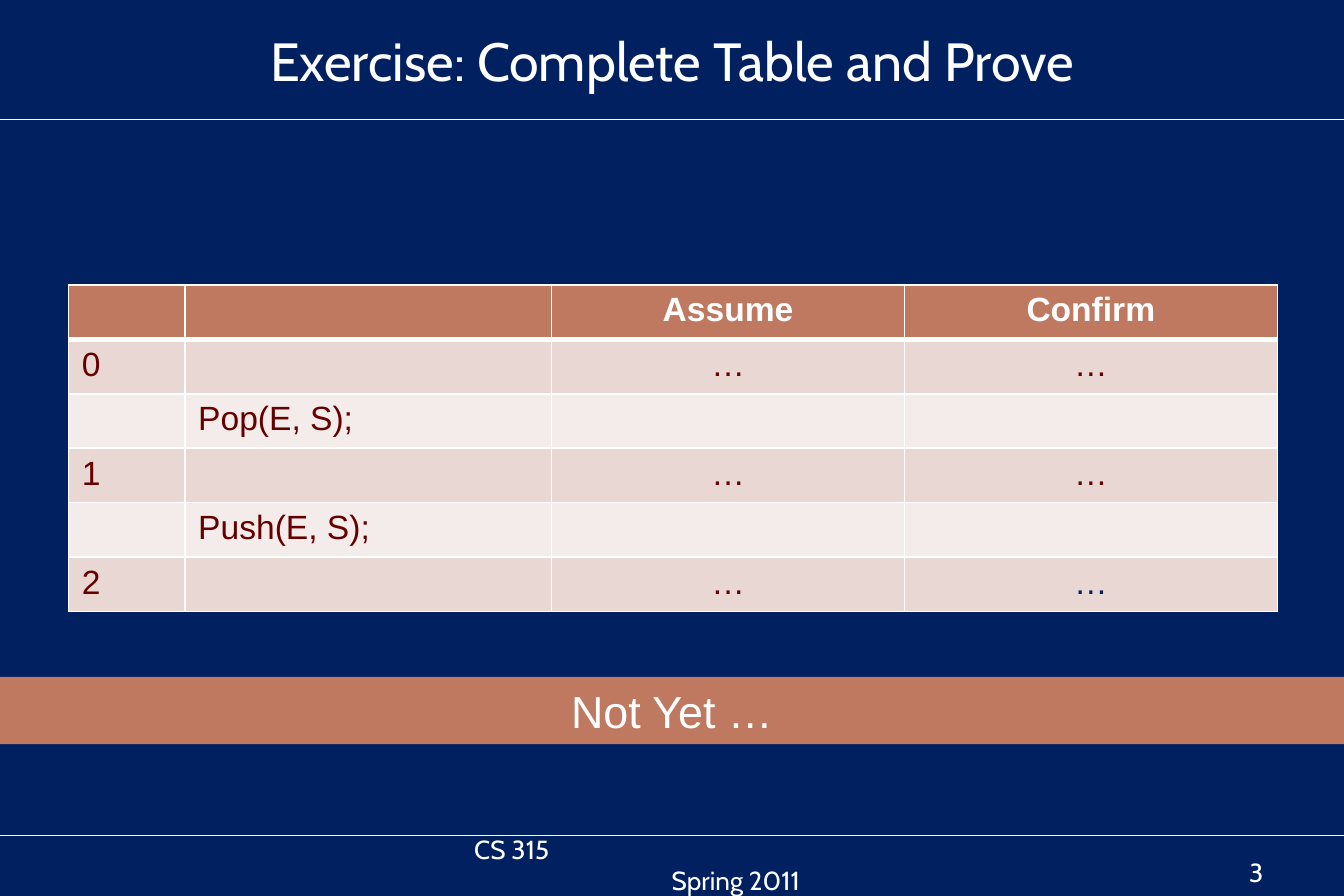
from dataclasses import dataclass
from typing import Any, NamedTuple

from lxml.etree import SubElement
from pptx import Presentation
from pptx.dml.color import RGBColor
from pptx.enum.shapes import MSO_CONNECTOR, MSO_SHAPE
from pptx.enum.text import MSO_ANCHOR, PP_ALIGN
from pptx.oxml.ns import qn
from pptx.util import Emu, Pt

SCALE = 4572  # EMU per px, 200 px to the inch


@dataclass(frozen=True)
class Theme:
    navy: str = "002060"
    clay: str = "BE7960"
    blush: str = "E8D7D2"
    pale: str = "F4ECEA"
    wine: str = "660000"
    white: str = "FFFFFF"
    head: str = "Cabin"
    body: str = "Arial"
    title: float = 28.8
    banner: float = 24
    cell: float = 18
    foot: float = 14
    rule: float = 0.75
    grid: float = 1
    thick: float = 3


class Box(NamedTuple):
    left: int
    top: int
    width: int
    height: int


class Look(NamedTuple):
    name: str
    size: float
    color: str
    bold: bool = False


class Line(NamedTuple):
    text: str
    indent: int = 0


THEME = Theme()
WIDTH, HEIGHT = 2000, 1334
RULES = (178, 1244)
COLS = (173, 546, 525, 555)
ROW = 81
GRID = Box(102, 424, sum(COLS), ROW * 6)
ROWS = (
    ("", "", "Assume", "Confirm"),
    ("0", "", "…", "…"),
    ("", "Pop(E, S);", "", ""),
    ("1", "", "…", "…"),
    ("", "Push(E, S);", "", ""),
    ("2", "", "…", "…"),
)


def px(num: int) -> Emu:
    return Emu(num * SCALE)


def rgb(code: str) -> RGBColor:
    return RGBColor.from_string(code)


def put(obj: Any, vals: dict[str, Any]) -> None:
    """Set each named value on the object."""
    for key, val in vals.items():
        setattr(obj, key, val)


def place(shape: Any, box: Box) -> None:
    put(shape, {key: px(val) for key, val in box._asdict().items()})


def write(frame: Any, lines: list[Line], look: Look, align: PP_ALIGN,
          anchor: MSO_ANCHOR = MSO_ANCHOR.MIDDLE) -> None:
    """Fill a text frame, one paragraph to a line."""
    put(frame, {"word_wrap": True, "vertical_anchor": anchor})
    for num, line in enumerate(lines):
        para = frame.paragraphs[0] if num == 0 else frame.add_paragraph()
        para.alignment = align
        if line.indent:
            para._p.get_or_add_pPr().set("marL", str(px(line.indent)))
        run = para.add_run()
        run.text = line.text
        put(run.font, {"name": look.name, "size": Pt(look.size), "bold": look.bold})
        run.font.color.rgb = rgb(look.color)


def rule(slide: Any, top: int) -> None:
    line = slide.shapes.add_connector(
        MSO_CONNECTOR.STRAIGHT, 0, px(top), px(WIDTH), px(top))
    line.line.color.rgb = rgb(THEME.white)
    line.line.width = Pt(THEME.rule)
    SubElement(line._element.spPr, qn("a:effectLst"))


def edge(cell: Any, sides: dict[str, float]) -> None:
    """Draw white cell borders with the given widths in points."""
    props = cell._tc.get_or_add_tcPr()
    for side, width in sides.items():
        line = SubElement(props, qn(f"a:ln{side}"), w=str(Pt(width)))
        fill = SubElement(line, qn("a:solidFill"))
        SubElement(fill, qn("a:srgbClr"), val=THEME.white)


def tint(row: int, col: int) -> str:
    """Pick the text colour of a cell."""
    if row == 0:
        return THEME.white
    last = (row, col) == (len(ROWS) - 1, len(COLS) - 1)
    return THEME.navy if last else THEME.wine


def grid(slide: Any) -> None:
    table = slide.shapes.add_table(
        len(ROWS), len(COLS), *map(px, GRID)).table
    for col, width in zip(table.columns, COLS):
        col.width = px(width)
    for row, texts in enumerate(ROWS):
        table.rows[row].height = px(ROW)
        shade = THEME.clay if row == 0 else (THEME.pale, THEME.blush)[row % 2]
        for col, text in enumerate(texts):
            cell = table.cell(row, col)
            edge(cell, {
                "L": THEME.grid,
                "R": THEME.grid,
                "T": THEME.thick if row == 1 else THEME.grid,
                "B": THEME.thick if row == 0 else THEME.grid,
            })
            cell.fill.solid()
            cell.fill.fore_color.rgb = rgb(shade)
            if text:
                look = Look(THEME.body, THEME.cell, tint(row, col), row == 0)
                align = PP_ALIGN.CENTER if col > 1 else PP_ALIGN.LEFT
                write(cell.text_frame, [Line(text)], look, align, MSO_ANCHOR.TOP)


def banner(slide: Any, text: str, box: Box) -> None:
    shape = slide.shapes.add_shape(MSO_SHAPE.RECTANGLE, *map(px, box))
    shape.shadow.inherit = False
    shape.fill.solid()
    shape.fill.fore_color.rgb = rgb(THEME.clay)
    shape.line.fill.background()
    look = Look(THEME.body, THEME.banner, THEME.white)
    write(shape.text_frame, [Line(text)], look, PP_ALIGN.CENTER)


def foot(slide: Any, lines: list[Line], box: Box, align: PP_ALIGN) -> None:
    shape = slide.shapes.add_textbox(*map(px, box))
    look = Look(THEME.head, THEME.foot, THEME.white)
    write(shape.text_frame, lines, look, align, MSO_ANCHOR.BOTTOM)


def main() -> None:
    deck = Presentation()
    put(deck, {"slide_width": px(WIDTH), "slide_height": px(HEIGHT)})
    slide = deck.slides.add_slide(deck.slide_layouts[5])
    slide.background.fill.solid()
    slide.background.fill.fore_color.rgb = rgb(THEME.navy)

    for top in RULES:
        rule(slide, top)
    title = slide.shapes.title
    place(title, Box(100, 30, 1800, 118))
    write(title.text_frame, [Line("Exercise: Complete Table and Prove")],
          Look(THEME.head, THEME.title, THEME.white), PP_ALIGN.CENTER)
    grid(slide)
    foot(slide, [Line("CS 315", 2), Line("Spring 2011", 296)],
         Box(684, 1240, 634, 104), PP_ALIGN.LEFT)
    foot(slide, [Line("3")], Box(1434, 1240, 466, 92), PP_ALIGN.RIGHT)
    banner(slide, "Not Yet …", Box(0, 1008, WIDTH, 100))
    deck.save("out.pptx")


if __name__ == "__main__":
    main()
